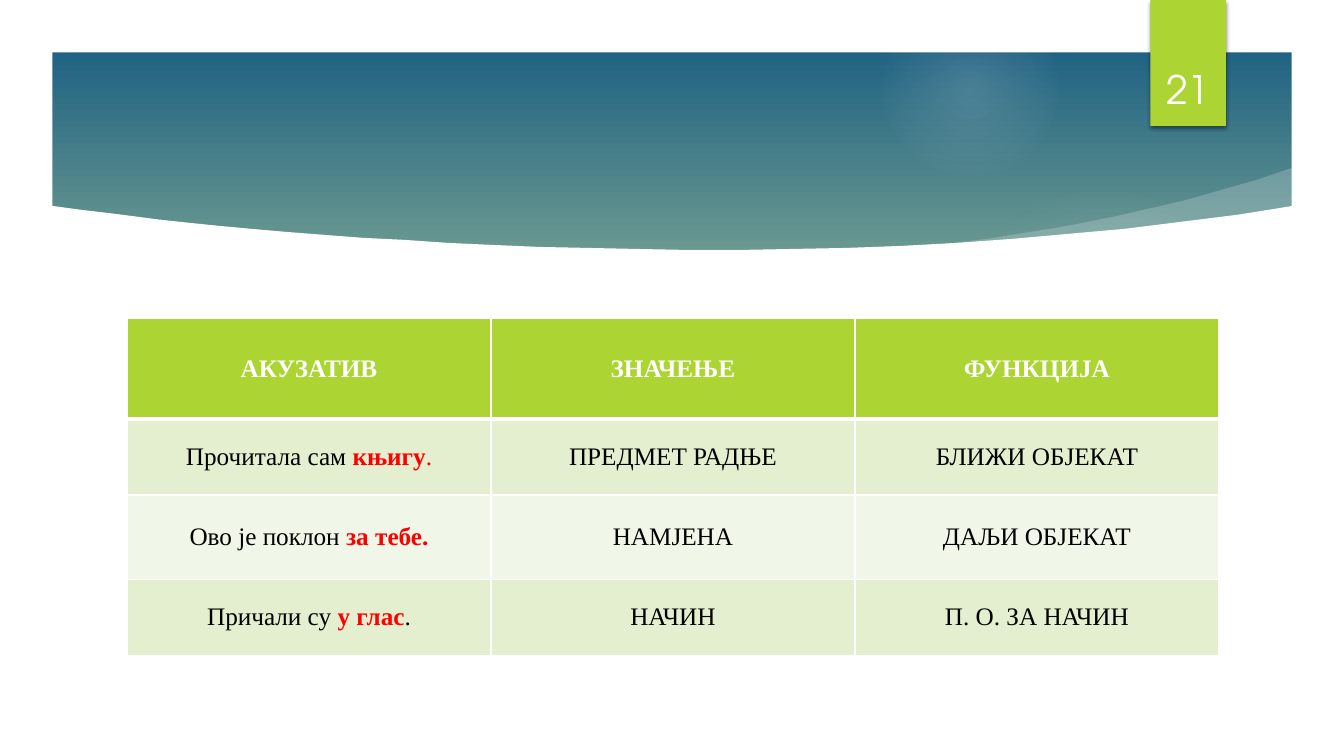
"""Build the slide on the meanings and functions of the accusative case."""
from typing import NamedTuple

from lxml.etree import SubElement as add_xml
from pptx import Presentation
from pptx.dml.color import RGBColor
from pptx.dml.fill import FillFormat
from pptx.enum.shapes import MSO_SHAPE as Preset
from pptx.enum.text import MSO_ANCHOR as Anchor, PP_ALIGN as Align
from pptx.oxml.ns import qn
from pptx.shapes.autoshape import Shape
from pptx.slide import Slide
from pptx.table import _Cell as Cell
from pptx.text.text import TextFrame
from pptx.util import Inches, Pt

COLORS = {
    "white": "FFFFFF", "black": "000000", "red": "FF0000", "lime": "ACD433",
    "odd_row": "E3EFCE", "even_row": "F1F7E8", "glare": "F7F7F7",
    "sky": "0E5580", "meadow": "DAECA3", "pale": "E6F2C2",
}
Point = tuple[float, float]


class Stop(NamedTuple):
    """One gradient stop, with position and opacity in percent."""
    position: int
    color: str
    opacity: int = 100


class Glare(NamedTuple):
    """A round light spot that fades out towards its rim."""
    left: float
    top: float
    size: float
    center: int
    middle: int
    rim: int


class Run(NamedTuple):
    """A piece of text in one colour and weight."""
    text: str
    color: str = "black"
    bold: bool = False


class TableRow(NamedTuple):
    """A table row with its height, fill and the runs of each cell."""
    height: float
    fill: str
    cells: list[list[Run]]


GLARES = [
    Glare(0, 2.92, 4.58, 11, 10, 75), Glare(0, 3.17, 2.58, 8, 8, 72),
    Glare(9.41, 1.83, 3.08, 7, 6, 69), Glare(8.75, 0, 1.75, 14, 7, 73),
    Glare(9.41, 6.42, 1.08, 14, 7, 66),
]
SHEEN = [
    (9.34, 2.5), (10.5, 2.45), (11.8, 2.3), (12.89, 2.14), (12.83, 1.66),
    (12.48, 1.78), (12.13, 1.88), (11.78, 1.98), (11.44, 2.06), (11.09, 2.14),
    (10.75, 2.21), (10.42, 2.27), (10.1, 2.32), (9.79, 2.37), (9.3, 2.43),
]
PAGE = [
    (0.5, 2.04), (0.5, 7), (12.84, 7), (12.84, 2.04), (12.28, 2.13),
    (11.72, 2.2), (11.16, 2.27), (10.6, 2.32), (10.04, 2.37), (9.49, 2.41),
    (8.94, 2.44), (8.4, 2.46), (7.86, 2.47), (7.34, 2.48), (6.82, 2.48),
    (6.32, 2.47), (5.83, 2.46), (5.35, 2.45), (4.88, 2.43), (4.44, 2.41),
    (4.01, 2.38), (3.6, 2.36), (3.21, 2.33), (2.83, 2.3), (2.49, 2.27),
    (2.16, 2.24), (1.87, 2.21), (1.59, 2.18), (1.13, 2.12), (0.79, 2.08),
]
FRAME_OUTSIDE = [(0, 0), (0, 7.5), (13.33, 7.5), (13.33, 0)]
FRAME_INSIDE = [(12.81, 6.98), (0.52, 6.98), (0.52, 0.52), (12.81, 0.52)]
ROWS = [
    TableRow(1, "lime", [[Run(heading, "white", True)] for heading in
                         ("АКУЗАТИВ", "ЗНАЧЕЊЕ", "ФУНКЦИЈА")]),
    TableRow(0.75, "odd_row", [
        [Run("Прочитала сам "), Run("књигу", "red", True), Run(".", "red")],
        [Run("ПРЕДМЕТ РАДЊЕ")], [Run("БЛИЖИ ОБЈЕКАТ")]]),
    TableRow(0.84, "even_row", [
        [Run("Ово је поклон "), Run("за тебе.", "red", True)],
        [Run("НАМЈЕНА")], [Run("ДАЉИ ОБЈЕКАТ")]]),
    TableRow(0.75, "odd_row", [
        [Run("Причали су "), Run("у глас", "red", True), Run(".")],
        [Run("НАЧИН")], [Run("П. О. ЗА НАЧИН")]]),
]


def rgb(name: str) -> RGBColor:
    """Look up a palette colour."""
    return RGBColor.from_string(COLORS[name])


def add_color(parent, name: str, opacity: int = 100) -> None:
    """Add a colour element with its opacity in percent."""
    color = add_xml(parent, qn("a:srgbClr"), val=COLORS[name])
    if opacity < 100:
        add_xml(color, qn("a:alpha"), val=str(opacity * 1000))


def set_gradient(fill: FillFormat, owner, stops: list[Stop], radial: bool) -> None:
    """Give a fill the stops, running downwards or out from the centre."""
    fill.gradient()
    gradient = owner.find(".//" + qn("a:gradFill"))
    for part in list(gradient):
        gradient.remove(part)
    stop_list = add_xml(gradient, qn("a:gsLst"))
    for stop in stops:
        mark = add_xml(stop_list, qn("a:gs"), pos=str(stop.position * 1000))
        add_color(mark, stop.color, stop.opacity)
    if radial:
        circle = add_xml(gradient, qn("a:path"), path="circle")
        add_xml(circle, qn("a:fillToRect"),
                {side: "50000" for side in "ltrb"})
    else:
        add_xml(gradient, qn("a:lin"), ang="5400000", scaled="0")


def paint(shape: Shape, color: str, opacity: int = 100) -> None:
    """Fill a shape plainly, without outline or shadow."""
    shape.shadow.inherit = False
    shape.line.fill.background()
    shape.fill.solid()
    shape.fill.fore_color.rgb = rgb(color)
    if opacity < 100:
        add_xml(shape.element.spPr.find(".//" + qn("a:srgbClr")),
                qn("a:alpha"), val=str(opacity * 1000))


def add_glare(slide: Slide, glare: Glare) -> None:
    """Draw one light spot."""
    size = Inches(glare.size)
    spot = slide.shapes.add_shape(
        Preset.OVAL, Inches(glare.left), Inches(glare.top), size, size)
    paint(spot, "glare")
    set_gradient(spot.fill, spot.element.spPr, [
        Stop(0, "glare", glare.center), Stop(36, "glare", glare.middle),
        Stop(glare.rim, "glare", 0)], radial=True)


def add_outline(slide: Slide, *contours: list[Point], opacity: int = 100) -> None:
    """Draw a white shape from closed contours."""
    first, *others = [[(Inches(x), Inches(y)) for x, y in contour]
                      for contour in contours]
    builder = slide.shapes.build_freeform(*first[0])
    builder.add_line_segments(first[1:], close=True)
    for contour in others:
        builder.move_to(*contour[0])
        builder.add_line_segments(contour[1:], close=True)
    paint(builder.convert_to_shape(), "white", opacity)


def write(frame: TextFrame, runs: list[Run], *, font: str, size: float) -> None:
    """Write centred runs into the first paragraph of a text frame."""
    paragraph = frame.paragraphs[0]
    paragraph.alignment = Align.CENTER
    for piece in runs:
        run = paragraph.add_run()
        run.text = piece.text
        run.font.name = font
        run.font.size = Pt(size)
        run.font.bold = piece.bold
        run.font.color.rgb = rgb(piece.color)


def add_borders(cell: Cell, **widths: float) -> None:
    """Add white cell borders with widths in points, keyed by side."""
    properties = cell._tc.get_or_add_tcPr()
    for side, width in widths.items():
        line = add_xml(properties, qn(f"a:ln{side}"), w=str(Pt(width)))
        add_color(add_xml(line, qn("a:solidFill")), "white")


def add_page_number(slide: Slide) -> None:
    """Draw the hanging ribbon and the page number on it."""
    ribbon = slide.shapes.add_shape(
        Preset.RECTANGLE, Inches(11.41), 0, Inches(0.75), Inches(1.25))
    paint(ribbon, "lime")
    shadow = add_xml(ribbon.element.spPr.find(qn("a:effectLst")),
                     qn("a:outerShdw"), blurRad=str(Pt(3)), dist=str(Pt(2)),
                     dir="5400000", algn="t", rotWithShape="0")
    add_color(shadow, "black", 45)
    frame = slide.shapes.add_textbox(
        Inches(11.32), Inches(0.32), Inches(0.92), Inches(0.84)).text_frame
    frame.word_wrap = True
    frame.vertical_anchor = Anchor.BOTTOM
    write(frame, [Run("21", "white")], font="TeX Gyre Adventor", size=28)


def add_case_table(slide: Slide) -> None:
    """Draw the table of examples, meanings and functions."""
    table = slide.shapes.add_table(
        len(ROWS), 3, Inches(1.26), Inches(3.16), Inches(10.83),
        Inches(sum(row.height for row in ROWS))).table
    for index, row in enumerate(ROWS):
        table.rows[index].height = Inches(row.height)
        for cell, runs in zip(table.rows[index].cells, row.cells):
            add_borders(cell, L=1, R=1, T=3 if index == 1 else 1,
                        B=3 if index == 0 else 1)
            cell.fill.solid()
            cell.fill.fore_color.rgb = rgb(row.fill)
            cell.vertical_anchor = Anchor.MIDDLE
            write(cell.text_frame, runs, font="Times New Roman", size=18)


def main() -> None:
    """Build and save the presentation."""
    deck = Presentation()
    deck.slide_width, deck.slide_height = Inches(13.33), Inches(7.5)
    slide = deck.slides.add_slide(deck.slide_layouts[6])
    set_gradient(slide.background.fill, slide.element, [
        Stop(0, "sky"), Stop(74, "meadow"), Stop(83, "meadow"),
        Stop(100, "pale")], radial=False)
    for glare in GLARES:
        add_glare(slide, glare)
    add_outline(slide, SHEEN, opacity=20)
    add_outline(slide, PAGE)
    add_outline(slide, FRAME_OUTSIDE, FRAME_INSIDE)
    add_page_number(slide)
    add_case_table(slide)
    deck.save("out.pptx")


if __name__ == "__main__":
    main()
